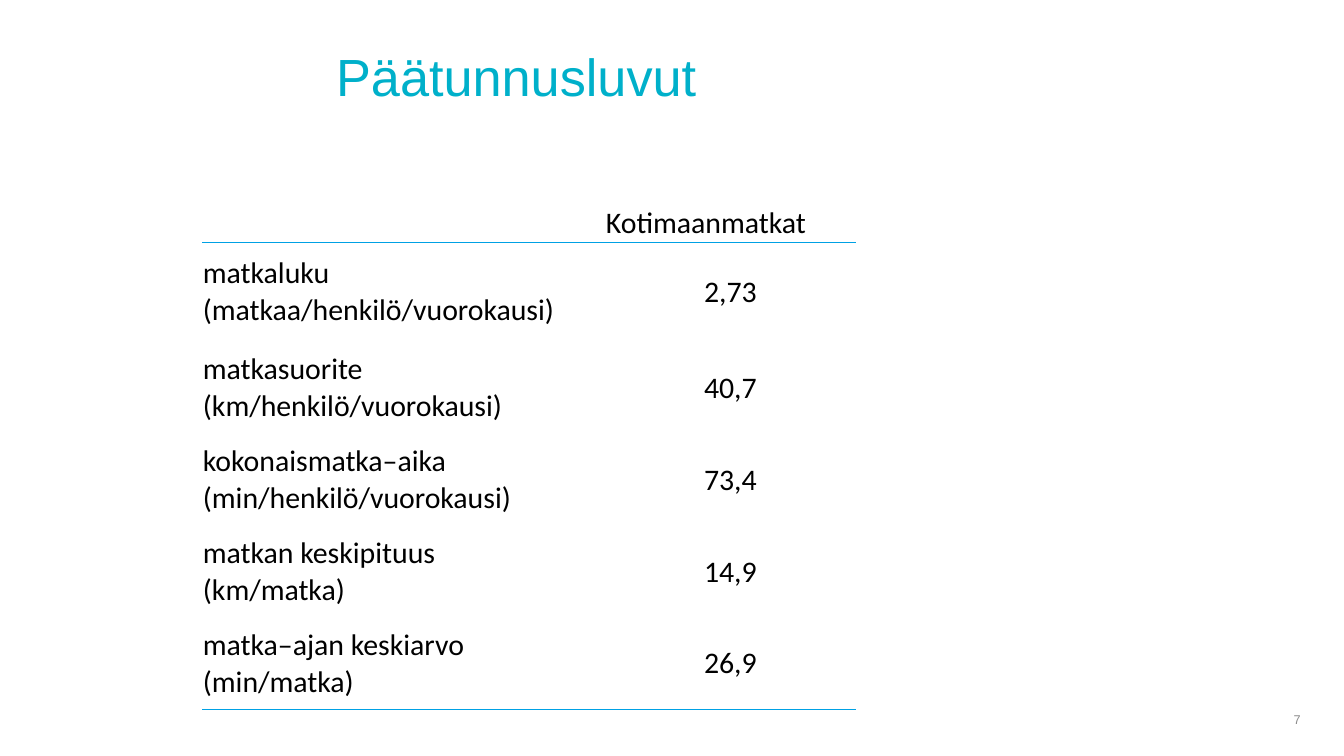
"""Build the slide of key travel figures for domestic trips."""
from copy import deepcopy
from dataclasses import dataclass

from lxml import etree
from pptx import Presentation
from pptx.dml.color import RGBColor
from pptx.enum.text import MSO_ANCHOR, PP_ALIGN
from pptx.oxml.ns import qn
from pptx.util import Pt

LEFT, CENTER, RIGHT = PP_ALIGN.LEFT, PP_ALIGN.CENTER, PP_ALIGN.RIGHT
MIDDLE, BOTTOM = MSO_ANCHOR.MIDDLE, MSO_ANCHOR.BOTTOM

TITLE = "Päätunnusluvut"
PAGE_NUMBER = "7"
HEADER = "Kotimaanmatkat"
FIGURES = [
    ("matkaluku\n(matkaa/henkilö/vuorokausi)", "2,73"),
    ("matkasuorite\n(km/henkilö/vuorokausi)", "40,7"),
    ("kokonaismatka–aika\n(min/henkilö/vuorokausi)", "73,4"),
    ("matkan keskipituus\n(km/matka)", "14,9"),
    ("matka–ajan keskiarvo\n(min/matka)", "26,9"),
]

SLIDE_SIZE = (1344, 756)
TITLE_BOX = (323, 46, 973, 67)
NUMBER_BOX = (1259, 700, 55, 40)
TABLE_ORIGIN = (203, 175)
COLUMN_WIDTHS = (403, 249)
ROW_HEIGHTS = (67, 100) + (92,) * (len(FIGURES) - 1)


@dataclass(frozen=True)
class Theme:
    title: str = "00B0CA"
    text: str = "000000"
    number: str = "8C8C8C"
    rule: str = "00A1E4"
    paper: str = "FFFFFF"
    heading_font: str = "Arial"
    table_font: str = "Calibri"
    title_size: float = 28
    table_size: float = 16
    number_size: float = 6.8
    rule_width: float = 0.5


THEME = Theme()


def px(length):
    return round(length * 914400 / 134.4)


def write(frame, text, *, size, color, font, align=LEFT, anchor=MIDDLE, spacing=None):
    frame.word_wrap = True
    frame.vertical_anchor = anchor
    paragraph = frame.paragraphs[0]
    paragraph.text = text
    paragraph.alignment = align
    if spacing:
        paragraph.line_spacing = spacing
    for run in paragraph.runs:
        run.font.size = Pt(size)
        run.font.name = font
        run.font.color.rgb = RGBColor.from_string(color)
    for line_break in paragraph._p.findall(qn("a:br")):
        line_break.append(deepcopy(paragraph.runs[0]._r.rPr))


def rule_cell(cell, edges):
    properties = cell._tc.get_or_add_tcPr()
    for position, edge in enumerate(edges):
        line = etree.Element(qn(f"a:ln{edge}"), w=str(Pt(THEME.rule_width)))
        fill = etree.SubElement(line, qn("a:solidFill"))
        etree.SubElement(fill, qn("a:srgbClr"), val=THEME.rule)
        properties.insert(position, line)


def add_figures_table(slide):
    rows = [("", HEADER), *FIGURES]
    table = slide.shapes.add_table(
        len(rows), len(COLUMN_WIDTHS), *map(px, TABLE_ORIGIN),
        px(sum(COLUMN_WIDTHS)), px(sum(ROW_HEIGHTS))).table
    table.first_row = table.horz_banding = False
    for column, width in zip(table.columns, COLUMN_WIDTHS):
        column.width = px(width)
    for row, height in zip(table.rows, ROW_HEIGHTS):
        row.height = px(height)

    edges = {0: "B", 1: "T", len(rows) - 1: "B"}
    for r, row in enumerate(rows):
        for c, text in enumerate(row):
            cell = table.cell(r, c)
            cell.margin_left = cell.margin_right = 0
            cell.margin_top = cell.margin_bottom = 0
            cell.fill.solid()
            cell.fill.fore_color.rgb = RGBColor.from_string(THEME.paper)
            rule_cell(cell, edges.get(r, ""))
            if text:
                write(cell.text_frame, text, size=THEME.table_size,
                      color=THEME.text, font=THEME.table_font,
                      align=CENTER if r and c else LEFT)
                cell.vertical_anchor = MIDDLE if r else BOTTOM


def main():
    deck = Presentation()
    deck.slide_width, deck.slide_height = map(px, SLIDE_SIZE)
    slide = deck.slides.add_slide(deck.slide_layouts[6])

    title = slide.shapes.add_textbox(*map(px, TITLE_BOX))
    write(title.text_frame, TITLE, size=THEME.title_size, color=THEME.title,
          font=THEME.heading_font, spacing=0.9)
    add_figures_table(slide)
    number = slide.shapes.add_textbox(*map(px, NUMBER_BOX))
    write(number.text_frame, PAGE_NUMBER, size=THEME.number_size,
          color=THEME.number, font=THEME.heading_font, align=RIGHT)
    deck.save("out.pptx")


if __name__ == "__main__":
    main()
